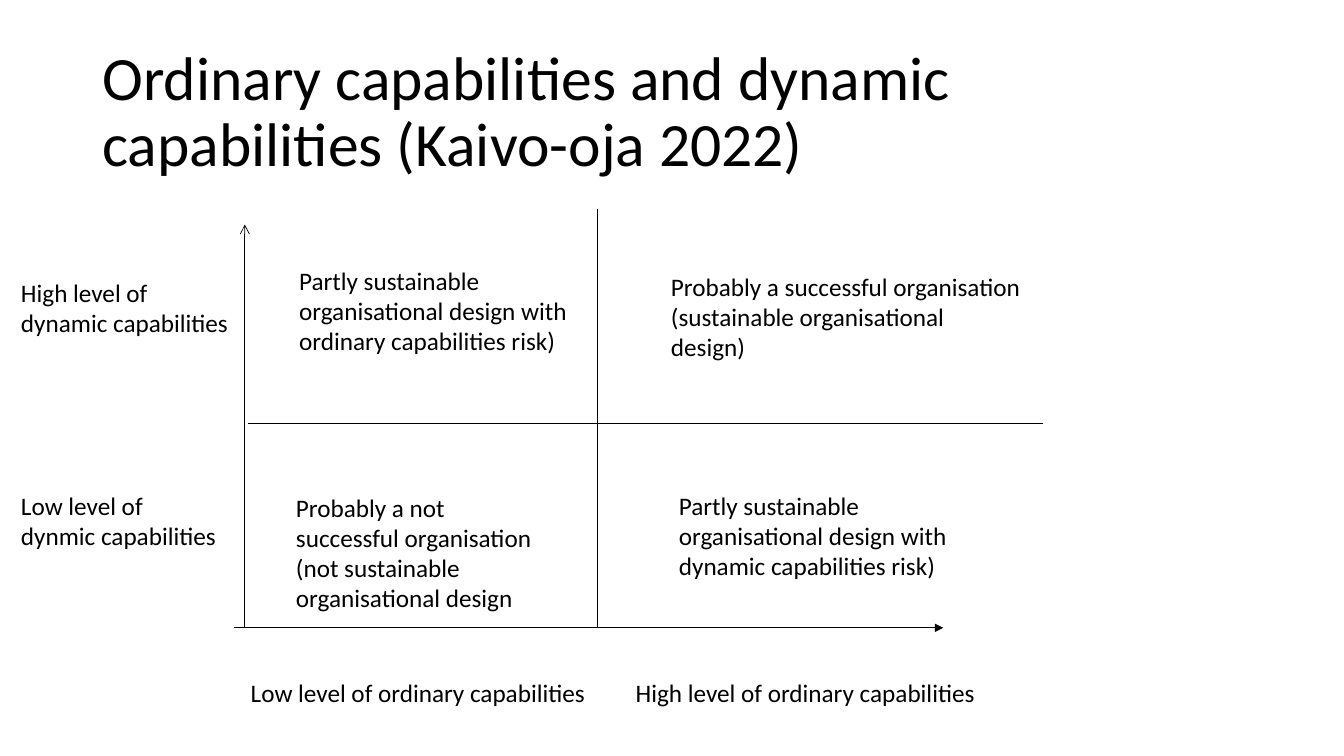
from lxml import etree
from pptx import Presentation
from pptx.dml.color import RGBColor
from pptx.enum.shapes import MSO_CONNECTOR
from pptx.enum.text import MSO_ANCHOR
from pptx.oxml.ns import qn
from pptx.util import Cm, Pt

BLACK = RGBColor(0, 0, 0)
STRAIGHT = MSO_CONNECTOR.STRAIGHT
MIDDLE = MSO_ANCHOR.MIDDLE
FONT = "Calibri"
ROW_GAP = Pt(109)
COLUMN_TAB = Cm(9.7)

AXES = [
    ((0, 10.56), (0, 0.4), "arrow"),
    ((-0.28, 10.56), (17.6, 10.56), "triangle"),
]
DIVIDERS = [
    ((0.08, 5.41), (20.12, 5.41), None),
    ((8.89, 10.56), (8.89, 0), None),
]
QUADRANTS = [
    ((1.12, 1.3, 7.34, 2.57), ["Partly sustainable", "organisational design with",
                               "ordinary capabilities risk)"]),
    ((10.49, 1.45, 9.42, 2.57), ["Probably a successful organisation",
                                 "(sustainable organisational", "design)"]),
    ((1.04, 7.01, 6.5, 3.33), ["Probably a not", "successful organisation",
                               "(not sustainable", "organisational design"]),
    ((10.69, 6.96, 7.34, 2.57), ["Partly sustainable", "organisational design with",
                                 "dynamic capabilities risk)"]),
]
ROW_LABELS = ["High level of", "dynamic capabilities",
              "Low level of", "dynmic capabilities"]
COLUMN_LABELS = ["Low level of ordinary capabilities\tHigh level of ordinary capabilities"]


def add_text(s, box, lines, size=18, wrap=False):
    tf = s.shapes.add_textbox(*(Cm(v) for v in box)).text_frame
    tf.word_wrap = wrap
    for i, line in enumerate(lines):
        p = tf.add_paragraph() if i else tf.paragraphs[0]
        r = p.add_run()
        r.text = line
        for name, value in {"name": FONT, "size": Pt(size)}.items():
            setattr(r.font, name, value)
        r.font.color.rgb = BLACK
    return tf


def add_line(s, origin, start, end, head):
    left, top = origin
    ends = [Cm(v) for x, y in (start, end) for v in (left + x, top + y)]
    line = s.shapes.add_connector(STRAIGHT, *ends)
    line.line.color.rgb = BLACK
    line.line.width = Pt(0.5)
    if head:
        etree.SubElement(line.line._get_or_add_ln(), qn("a:tailEnd"), type=head)
    etree.SubElement(line._element.spPr, qn("a:effectLst"))


def add_title(s, box):
    tf = add_text(s, box, ["Ordinary capabilities and dynamic capabilities (Kaivo-oja 2022)"],
                  size=44, wrap=True)
    tf.vertical_anchor = MIDDLE
    tf.paragraphs[0].line_spacing = 0.9


def add_matrix(s, left, top):
    for start, end, head in AXES + DIVIDERS:
        add_line(s, (left, top), start, end, head)
    for (x, y, w, h), lines in QUADRANTS:
        add_text(s, (left + x, top + y, w, h), lines)


def add_labels(s, left, top):
    tf = add_text(s, (left - 5.89, top + 1.6, 7.11, 7.19), ROW_LABELS)
    tf.paragraphs[2].space_before = ROW_GAP
    tf = add_text(s, (left - 0.1, top + 11.68, 19.8, 1.02), COLUMN_LABELS, wrap=True)
    tabs = etree.SubElement(tf.paragraphs[0]._p.get_or_add_pPr(), qn("a:tabLst"))
    etree.SubElement(tabs, qn("a:tab"), pos=str(int(COLUMN_TAB)), algn="l")


def main():
    prs = Presentation()
    prs.slide_width, prs.slide_height = Cm(33.87), Cm(19.05)
    s = prs.slides.add_slide(prs.slide_layouts[6])
    add_title(s, (2.33, 1.02, 29.21, 3.68))
    add_matrix(s, 6.17, 5.26)
    add_labels(s, 6.17, 5.26)
    prs.save("out.pptx")


if __name__ == "__main__":
    main()
